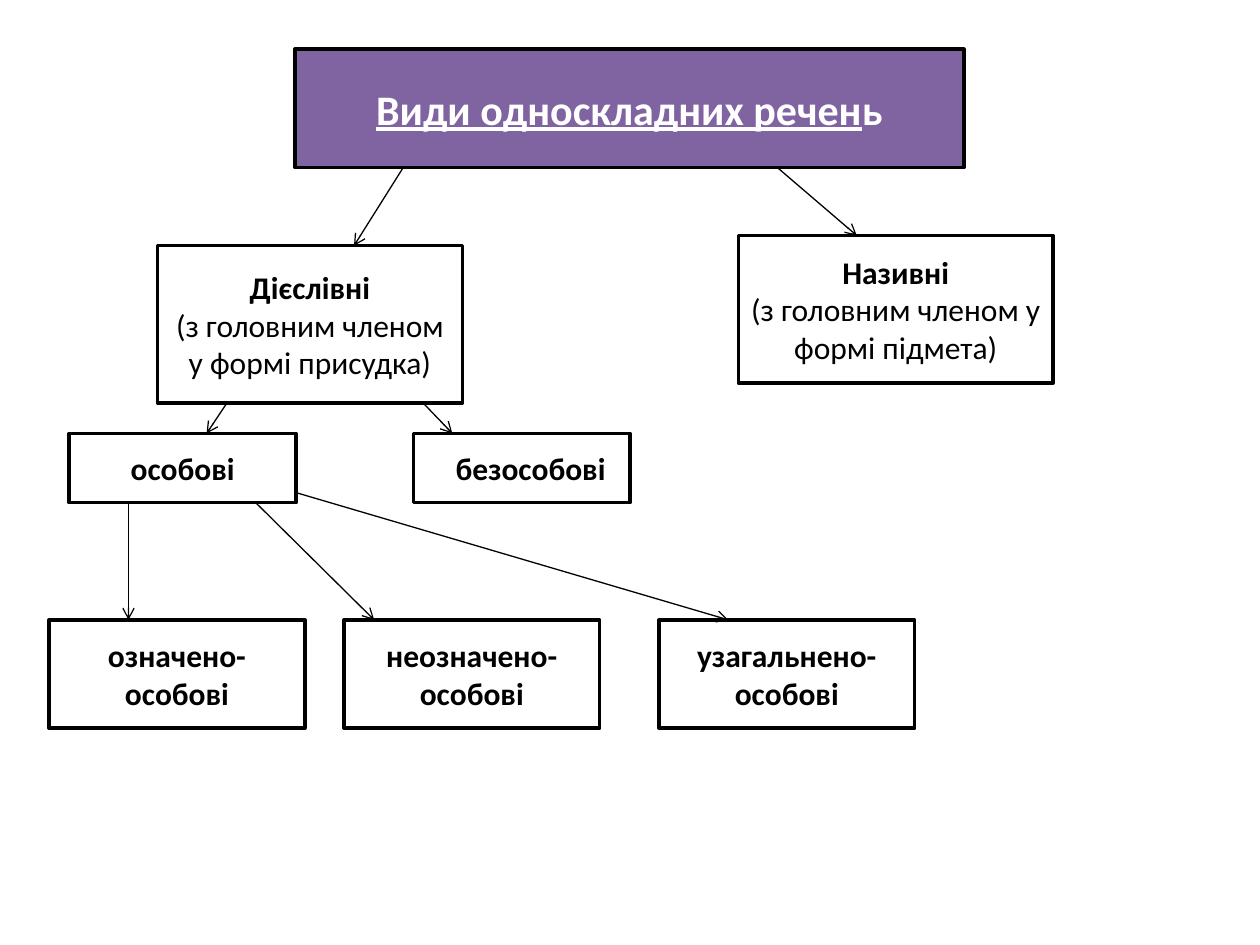
"""Build a slide with a tree of one-member sentence types."""
from lxml import etree
from pptx import Presentation
from pptx.dml.color import RGBColor
from pptx.enum.shapes import MSO_CONNECTOR as CONN, MSO_SHAPE as SHAPE
from pptx.enum.text import MSO_ANCHOR as ANCHOR, MSO_AUTO_SIZE as FIT, PP_ALIGN as ALIGN
from pptx.oxml.ns import qn
from pptx.util import Inches, Pt

COLORS = {"purple": "8064A2", "white": "FFFFFF", "black": "000000"}


def rgb(name):
    return RGBColor.from_string(COLORS[name])


def add_text(p, text, size=18, color="black", bold=True, underline=False):
    r = p.add_run()
    r.text = text
    r.font.name = "Calibri"
    r.font.size = Pt(size)
    r.font.bold = bold
    r.font.underline = underline
    r.font.color.rgb = rgb(color)


class Diagram:
    def __init__(self, slide, border=2, arrow_width=0.75):
        self.slide = slide
        self.border = border
        self.arrow_width = arrow_width

    def style_box(self, sp, fill):
        sp.fill.solid()
        sp.fill.fore_color.rgb = rgb(fill)
        sp.line.color.rgb = rgb("black")
        sp.line.width = Pt(self.border)
        tf = sp.text_frame
        tf.word_wrap = True
        tf.auto_size = FIT.NONE
        tf.vertical_anchor = ANCHOR.MIDDLE
        tf.paragraphs[0].alignment = ALIGN.CENTER
        return tf

    def title(self, x, y, w, h, underlined, ending):
        sp = self.slide.shapes.title
        sp.left, sp.top, sp.width, sp.height = (Inches(v) for v in (x, y, w, h))
        p = self.style_box(sp, "purple").paragraphs[0]
        add_text(p, underlined, size=24, color="white", underline=True)
        add_text(p, ending, size=24, color="white")

    def box(self, x, y, w, h, name, note=None, indent=0.1):
        sp = self.slide.shapes.add_shape(SHAPE.RECTANGLE, *(Inches(v) for v in (x, y, w, h)))
        sp.shadow.inherit = False
        tf = self.style_box(sp, "white")
        tf.margin_left = Inches(indent)
        add_text(tf.paragraphs[0], name)
        if note:
            p = tf.add_paragraph()
            p.alignment = ALIGN.CENTER
            add_text(p, note, bold=False)

    def arrow(self, x1, y1, x2, y2):
        c = self.slide.shapes.add_connector(CONN.STRAIGHT, *(Inches(v) for v in (x1, y1, x2, y2)))
        c.line.color.rgb = rgb("black")
        c.line.width = Pt(self.arrow_width)
        etree.SubElement(c.line._get_or_add_ln(), qn("a:tailEnd"), type="arrow")
        etree.SubElement(c._element.spPr, qn("a:effectLst"))


def main():
    prs = Presentation()
    prs.slide_width, prs.slide_height = Inches(10), Inches(7.5)
    d = Diagram(prs.slides.add_slide(prs.slide_layouts[5]))

    d.title(2.34, 0.39, 5.31, 0.94, "Види односкладних речен", "ь")
    d.box(1.25, 1.95, 2.42, 1.25, "Дієслівні", "(з головним членом у формі присудка)")
    d.box(5.86, 1.87, 2.5, 1.17, "Називні", "(з головним членом у формі підмета)")
    d.box(0.55, 3.44, 1.8, 0.55, "особові")
    d.box(3.28, 3.44, 1.72, 0.55, "безособові", indent=0.24)

    personal = ("означено-особові", "неозначено-особові", "узагальнено-особові")
    for x, name in zip((0.39, 2.73, 5.23), personal):
        d.box(x, 4.92, 2.03, 0.86, name)

    for ends in (
        (3.2, 1.33, 2.81, 1.95),
        (6.17, 1.33, 6.8, 1.87),
        (1.8, 3.2, 1.64, 3.44),
        (3.36, 3.2, 3.59, 3.44),
        (1.02, 3.99, 1.02, 4.92),
        (2.03, 3.99, 2.97, 4.92),
        (2.35, 3.91, 5.78, 4.92),
    ):
        d.arrow(*ends)

    prs.save("out.pptx")


if __name__ == "__main__":
    main()
